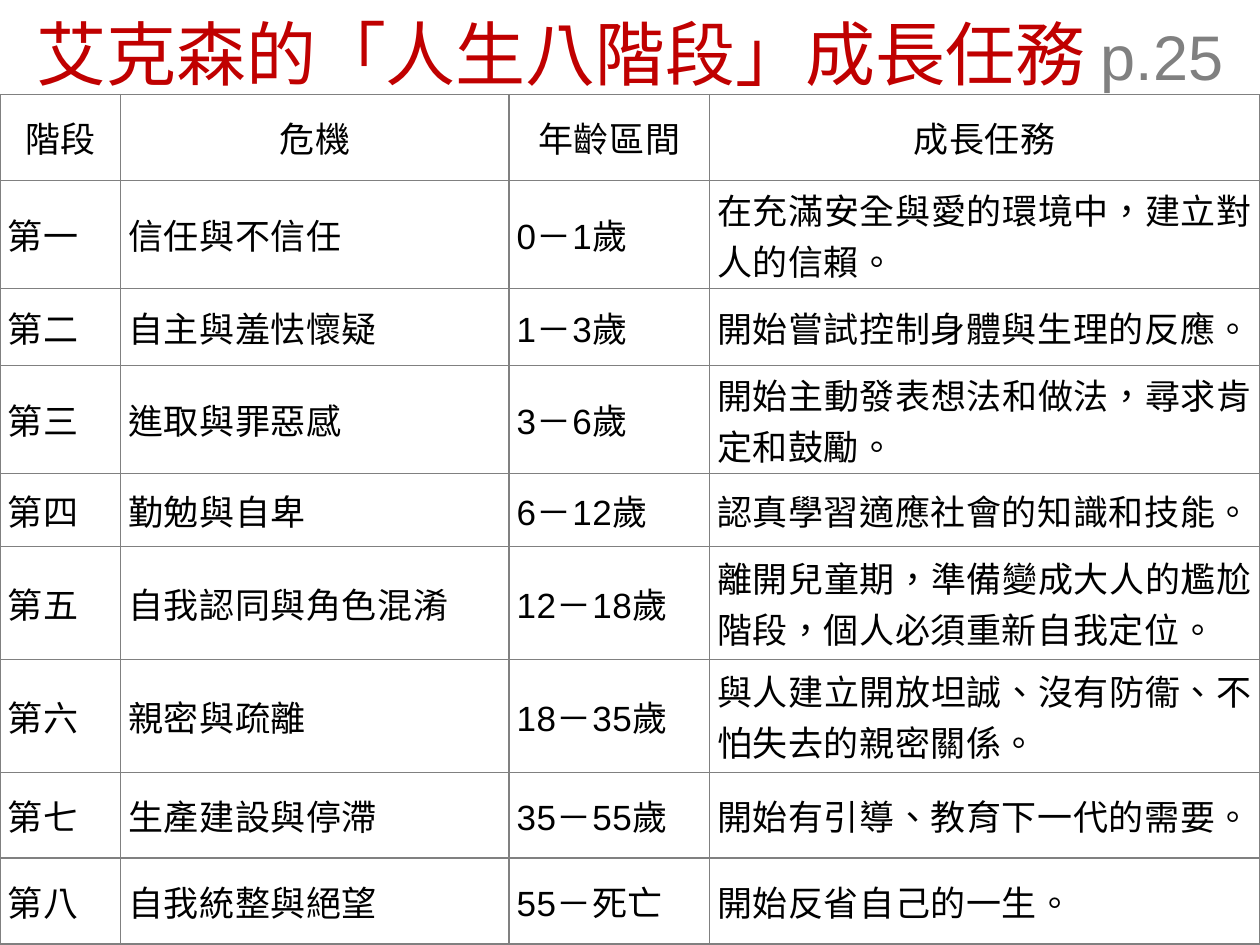
"""Build a slide with a table of Erikson's eight stages of life."""
from typing import NamedTuple

from lxml import etree
from pptx import Presentation
from pptx.dml.color import RGBColor
from pptx.enum.text import MSO_ANCHOR, PP_ALIGN
from pptx.oxml.ns import qn
from pptx.util import Pt

CENTER, JUSTIFY = PP_ALIGN.CENTER, PP_ALIGN.JUSTIFY
MIDDLE, BOTTOM = MSO_ANCHOR.MIDDLE, MSO_ANCHOR.BOTTOM
RED = RGBColor(0xC0, 0x00, 0x00)
GRAY = RGBColor(0x80, 0x80, 0x80)
BLACK = RGBColor(0x00, 0x00, 0x00)
FONT = "Arial"
LANG = "zh-TW"
COL_WIDTHS = (69, 222, 114.5, 314.5)
TABLE_TOP = 54


class Stage(NamedTuple):
    height: float
    name: str
    crisis: str
    ages: str
    task: str


class TitlePart(NamedTuple):
    text: str
    size: int
    color: RGBColor


TITLE = (
    TitlePart("艾克森的「人生八階段」成長任務 ", 40, RED),
    TitlePart("p.25", 36, GRAY),
)
STAGES = (
    Stage(49.1, "階段", "危機", "年齡區間", "成長任務"),
    Stage(61.7, "第一", "信任與不信任", "0－1歲", "在充滿安全與愛的環境中，建立對人的信賴。"),
    Stage(44, "第二", "自主與羞怯懷疑", "1－3歲", "開始嘗試控制身體與生理的反應。"),
    Stage(61.7, "第三", "進取與罪惡感", "3－6歲", "開始主動發表想法和做法，尋求肯定和鼓勵。"),
    Stage(41.7, "第四", "勤勉與自卑", "6－12歲", "認真學習適應社會的知識和技能。"),
    Stage(64.8, "第五", "自我認同與角色混淆", "12－18歲", "離開兒童期，準備變成大人的尷尬階段，個人必須重新自我定位。"),
    Stage(64.4, "第六", "親密與疏離", "18－35歲", "與人建立開放坦誠、沒有防衞、不怕失去的親密關係。"),
    Stage(49.1, "第七", "生產建設與停滯", "35－55歲", "開始有引導、教育下一代的需要。"),
    Stage(49.1, "第八", "自我統整與絕望", "55－死亡", "開始反省自己的一生。"),
)


def add_title(s, parts: tuple[TitlePart, ...]) -> None:
    sp = s.shapes.add_textbox(Pt(0), Pt(6), Pt(720), Pt(48))
    tf = sp.text_frame
    tf.word_wrap = True
    tf.vertical_anchor = BOTTOM
    tf.margin_top = tf.margin_bottom = Pt(0)
    p = tf.paragraphs[0]
    p.alignment = CENTER
    for part in parts:
        r = p.add_run()
        r.text = part.text
        r.font.name = FONT
        r.font.size = Pt(part.size)
        r.font.color.rgb = part.color
        r._r.get_or_add_rPr().set("lang", LANG)


def add_borders(cell) -> None:
    tcPr = cell._tc.get_or_add_tcPr()
    for i, side in enumerate(("a:lnL", "a:lnR", "a:lnT", "a:lnB")):
        ln = etree.Element(qn(side), w=str(Pt(1)))
        fill = etree.SubElement(ln, qn("a:solidFill"))
        etree.SubElement(fill, qn("a:srgbClr"), val=str(GRAY))
        tcPr.insert(i, ln)


def fill_cell(cell, text: str, alignment: PP_ALIGN) -> None:
    cell.fill.background()
    add_borders(cell)
    cell.vertical_anchor = MIDDLE
    cell.margin_left = cell.margin_right = Pt(4.3)
    cell.margin_top = cell.margin_bottom = Pt(0)
    p = cell.text_frame.paragraphs[0]
    p.alignment = alignment
    p.font.name = FONT
    p.font.size = Pt(20)
    p.font.color.rgb = BLACK
    r = p.add_run()
    r.text = text
    rPr = r._r.get_or_add_rPr()
    rPr.set("lang", LANG)
    rPr.set("spc", "30")


def add_stage_table(s, stages: tuple[Stage, ...]) -> None:
    height = sum(stage.height for stage in stages)
    frame = s.shapes.add_table(len(stages), len(COL_WIDTHS), Pt(0), Pt(TABLE_TOP),
                               Pt(sum(COL_WIDTHS)), Pt(height))
    table = frame.table
    table.first_row = table.horz_banding = False
    for column, width in zip(table.columns, COL_WIDTHS):
        column.width = Pt(width)
    for i, (row, stage) in enumerate(zip(table.rows, stages)):
        row.height = Pt(stage.height)
        for cell, text in zip(row.cells, stage[1:]):
            fill_cell(cell, text, JUSTIFY if i else CENTER)


def main() -> None:
    prs = Presentation()
    prs.slide_width, prs.slide_height = Pt(720), Pt(540)
    s = prs.slides.add_slide(prs.slide_layouts[6])
    add_title(s, TITLE)
    add_stage_table(s, STAGES)
    prs.save("out.pptx")


if __name__ == "__main__":
    main()
